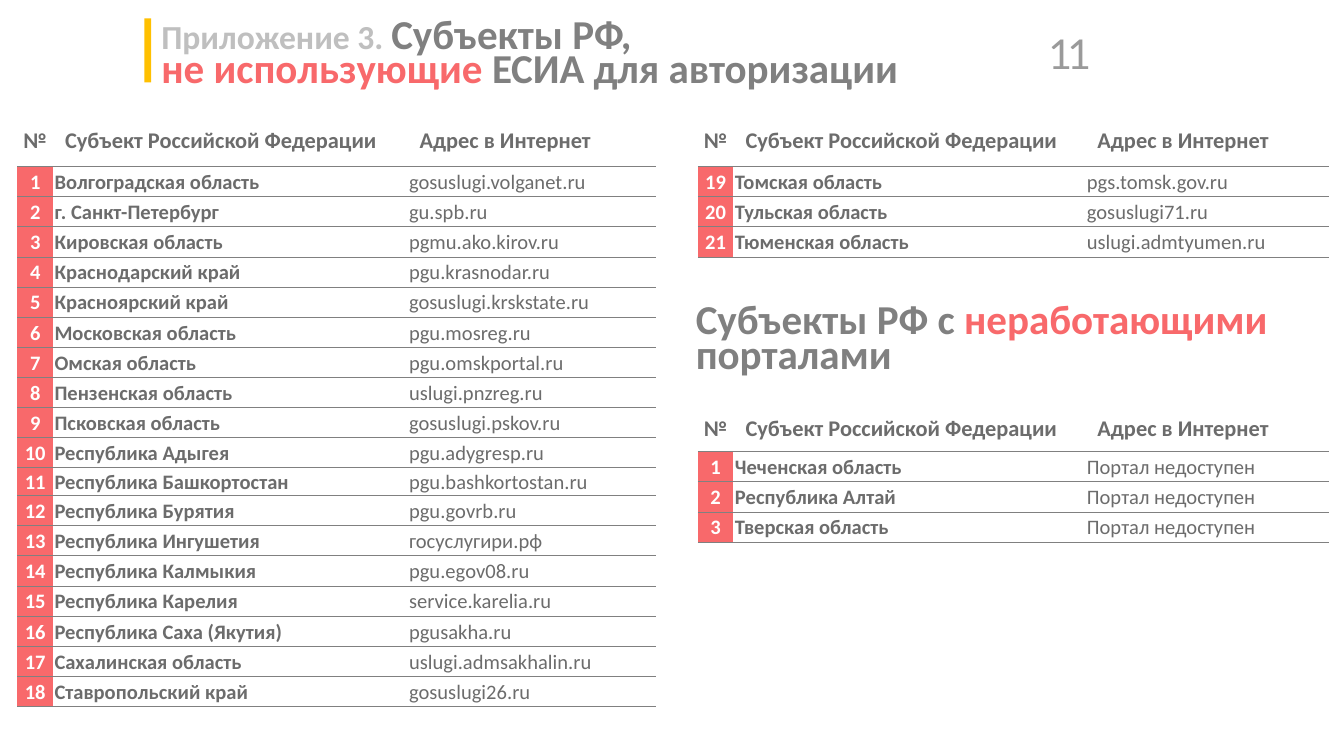
from lxml.etree import SubElement
from pptx import Presentation
from pptx.dml.color import RGBColor
from pptx.enum.shapes import MSO_SHAPE
from pptx.enum.text import MSO_ANCHOR, MSO_AUTO_SIZE, PP_ALIGN
from pptx.oxml import parse_xml
from pptx.oxml.ns import nsdecls, qn
from pptx.util import Cm, Pt

# Content
TITLE = [
    [("Приложение 3. ", "faint", "lead"), ("Субъекты РФ,", "heading", "title")],
    [("не использующие ", "accent", "title"), ("ЕСИА для авторизации", "heading", "title")],
]
SUBTITLE = [
    [("Субъекты РФ с ", "heading", "title"), ("неработающими", "accent", "title"),
     (" порталами", "heading", "title")],
]
PAGE_NUMBER = "11"
HEADER = ("№", "Субъект Российской Федерации", "Адрес в Интернет")
REGIONS = [
    ("Волгоградская область", "gosuslugi.volganet.ru"),
    ("г. Санкт-Петербург", "gu.spb.ru"),
    ("Кировская область", "pgmu.ako.kirov.ru"),
    ("Краснодарский край", "pgu.krasnodar.ru"),
    ("Красноярский край", "gosuslugi.krskstate.ru"),
    ("Московская область", "pgu.mosreg.ru"),
    ("Омская область", "pgu.omskportal.ru"),
    ("Пензенская область", "uslugi.pnzreg.ru"),
    ("Псковская область", "gosuslugi.pskov.ru"),
    ("Республика Адыгея", "pgu.adygresp.ru"),
    ("Республика Башкортостан", "pgu.bashkortostan.ru"),
    ("Республика Бурятия", "pgu.govrb.ru"),
    ("Республика Ингушетия", "госуслугири.рф"),
    ("Республика Калмыкия", "pgu.egov08.ru"),
    ("Республика Карелия", "service.karelia.ru"),
    ("Республика Саха (Якутия)", "pgusakha.ru"),
    ("Сахалинская область", "uslugi.admsakhalin.ru"),
    ("Ставропольский край", "gosuslugi26.ru"),
    ("Томская область", "pgs.tomsk.gov.ru"),
    ("Тульская область", "gosuslugi71.ru"),
    ("Тюменская область", "uslugi.admtyumen.ru"),
]
BROKEN_PORTALS = [(region, "Портал недоступен") for region in
                  ("Чеченская область", "Республика Алтай", "Тверская область")]

# Theme
THEME = {
    "font": "Calibri", "number_font": "Lato",
    "color": {"heading": "808080", "faint": "BFBFBF", "accent": "F8696B", "text": "6C6C6C",
              "number": "9A9A9A", "marker": "FFC000", "white": "FFFFFF", "rule": "808080"},
    "size": {"title": 22, "lead": 18, "header": 12, "body": 11},
}
NO_STYLE = "{2D5ABB26-0587-4C30-8999-92F81FD0307C}"

# Layout, in centimetres
SPLIT = 18  # regions in the left table
LEFT_X, RIGHT_X, TABLE_Y, BROKEN_Y = 0.33, 13.19, 2.13, 7.64
LEFT_COLUMNS, RIGHT_COLUMNS = (0.67, 6.7, 4.7), (0.67, 6.65, 4.6)
ROW_HEIGHT, TIGHT_HEIGHT = 0.57, 0.53
TIGHT_NUMBER = 11
CELL_MARGIN, HEADER_INDENT = 0.03, 0.2


def color(name):
    return RGBColor.from_string(THEME["color"][name])


def style(run, color_name, size_name, bold=True, font="font"):
    run.font.name = THEME[font]
    run.font.size = Pt(THEME["size"][size_name])
    run.font.bold = bold
    run.font.color.rgb = color(color_name)


def write_heading(shape, lines):
    frame = shape.text_frame
    frame.word_wrap = True
    frame.auto_size = MSO_AUTO_SIZE.NONE
    frame.vertical_anchor = MSO_ANCHOR.MIDDLE
    frame.margin_left = frame.margin_right = frame.margin_top = Cm(0.25)
    frame.margin_bottom = Cm(0.13)
    paragraph = frame.paragraphs[0]
    paragraph.alignment = PP_ALIGN.LEFT
    paragraph.line_spacing = 0.7
    for index, line in enumerate(lines):
        if index:
            paragraph.add_line_break()
        for text, color_name, size_name in line:
            run = paragraph.add_run()
            run.text = text
            style(run, color_name, size_name)


def add_rule(cell, side):
    line = parse_xml(f'<a:{side} {nsdecls("a")} w="{Pt(0.5)}"><a:solidFill>'
                     f'<a:srgbClr val="{THEME["color"]["rule"]}"/></a:solidFill></a:{side}>')
    cell._tc.get_or_add_tcPr().insert(0, line)


def add_region_table(slide, x, y, columns, header_height, regions, first=1):
    rows = [HEADER] + [(str(number), *region) for number, region in enumerate(regions, first)]
    heights = [header_height] + [
        TIGHT_HEIGHT if number == str(TIGHT_NUMBER) else ROW_HEIGHT for number, *_ in rows[1:]]
    table = slide.shapes.add_table(len(rows), len(columns), Cm(x), Cm(y),
                                   Cm(sum(columns)), Cm(sum(heights))).table
    table.first_row = table.horz_banding = False
    table._tbl.tblPr.find(qn("a:tableStyleId")).text = NO_STYLE
    for column, width in zip(table.columns, columns):
        column.width = Cm(width)
    for r, (row, height) in enumerate(zip(rows, heights)):
        table.rows[r].height = Cm(height)
        for c, text in enumerate(row):
            cell = table.cell(r, c)
            is_header, is_number = r == 0, c == 0
            indent = HEADER_INDENT if is_header and not is_number else 0
            cell.margin_left = Cm(CELL_MARGIN + indent)
            cell.margin_right = cell.margin_top = Cm(CELL_MARGIN)
            cell.margin_bottom = 0
            cell.vertical_anchor = MSO_ANCHOR.MIDDLE
            if is_number and not is_header:
                cell.fill.solid()
                cell.fill.fore_color.rgb = color("accent")
            else:
                cell.fill.background()
            add_rule(cell, "lnB")
            if not is_header:
                add_rule(cell, "lnT")
            cell.text_frame.text = text
            paragraph = cell.text_frame.paragraphs[0]
            paragraph.alignment = PP_ALIGN.CENTER if is_number else PP_ALIGN.LEFT
            style(paragraph.runs[0], "white" if is_number and not is_header else "text",
                  "header" if is_header else "body", bold=is_header or c < 2)


def main():
    deck = Presentation()
    deck.slide_width, deck.slide_height = Cm(25.4), Cm(14.29)
    slide = deck.slides.add_slide(deck.slide_layouts[5])

    # Title with its marker
    marker = slide.shapes.add_shape(MSO_SHAPE.RECTANGLE, Cm(2.73), Cm(0.35), Cm(0.13), Cm(1.21))
    marker.shadow.inherit = False
    marker.fill.solid()
    marker.fill.fore_color.rgb = color("marker")
    marker.line.fill.background()
    title = slide.shapes.title
    title.left, title.top, title.width, title.height = Cm(2.8), Cm(0.25), Cm(18.1), Cm(1.5)
    write_heading(title, TITLE)

    # Page number
    page = slide.shapes.add_textbox(Cm(19.3), Cm(0.44), Cm(1.5), Cm(1.12))
    page.text_frame.margin_left = page.text_frame.margin_right = Cm(0.18)
    page.text_frame.margin_top = page.text_frame.margin_bottom = Cm(0.1)
    page.text_frame.word_wrap = True
    page.text_frame.text = PAGE_NUMBER
    paragraph = page.text_frame.paragraphs[0]
    paragraph.alignment = PP_ALIGN.RIGHT
    style(paragraph.runs[0], "number", "title", bold=False, font="number_font")
    paragraph.runs[0].font._element.set("spc", "-260")

    # Regions without the shared sign-in
    add_region_table(slide, LEFT_X, TABLE_Y, LEFT_COLUMNS, 1.02, REGIONS[:SPLIT])
    add_region_table(slide, RIGHT_X, TABLE_Y, RIGHT_COLUMNS, 1.02, REGIONS[SPLIT:], SPLIT + 1)

    # Regions whose portals are down
    subtitle = slide.shapes.add_textbox(Cm(12.9), Cm(5.38), Cm(12), Cm(2.03))
    write_heading(subtitle, SUBTITLE)
    add_region_table(slide, RIGHT_X, BROKEN_Y, RIGHT_COLUMNS, 0.9, BROKEN_PORTALS)

    deck.save("out.pptx")


if __name__ == "__main__":
    main()
